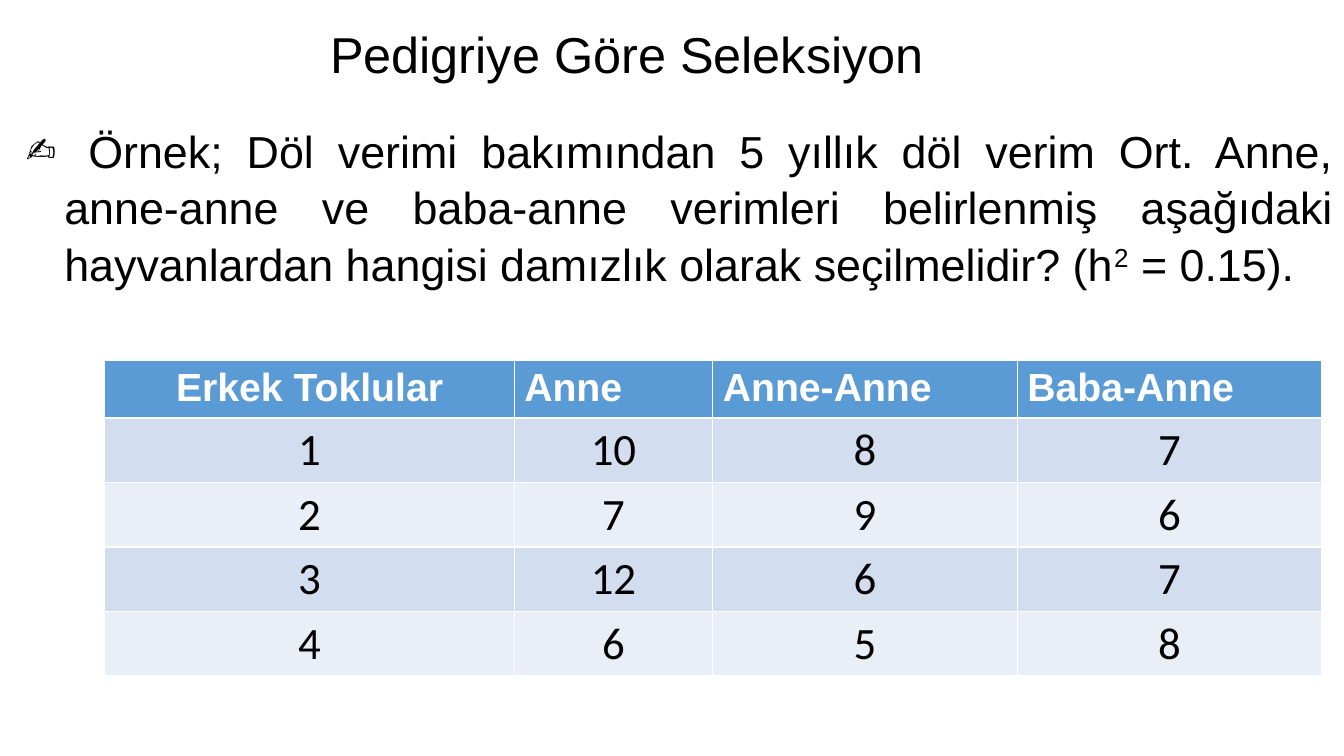
from lxml.etree import SubElement
from pptx import Presentation
from pptx.dml.color import RGBColor
from pptx.enum.text import MSO_ANCHOR, PP_ALIGN
from pptx.oxml.ns import qn
from pptx.util import Inches, Pt

COLORS = {
    "text": "000000",
    "header_text": "FFFFFF",
    "header": "5B9BD5",
    "odd_row": "D2DEEF",
    "even_row": "EAEFF7",
}
TITLE = "Pedigriye Göre Seleksiyon"
QUESTION = (
    " Örnek; Döl verimi bakımından 5 yıllık döl verim Ort. Anne, anne-anne ve "
    "baba-anne verimleri belirlenmiş aşağıdaki hayvanlardan hangisi damızlık "
    "olarak seçilmelidir? (h"
)
HEADERS = ["Erkek Toklular", "Anne", "Anne-Anne", "Baba-Anne"]
YIELDS = [(1, 10, 8, 7), (2, 7, 9, 6), (3, 12, 6, 7), (4, 6, 5, 8)]
COLUMN_WIDTHS = [4.06, 1.97, 3.02, 3.02]
HEADER_HEIGHT, ROW_HEIGHT = 0.54, 0.64


def add_text(paragraph, text, size=32, font="Arial", color="text", bold=False, baseline=0):
    run = paragraph.add_run()
    run.text = text
    run.font.size = Pt(size)
    run.font.name = font
    run.font.bold = bold
    run.font.color.rgb = RGBColor.from_string(COLORS[color])
    if baseline:
        run.font._element.set("baseline", str(baseline * 1000))


class SelectionSlide:
    """Draws the text and table of one slide in a shared style."""

    def __init__(self, presentation):
        self.slide = presentation.slides.add_slide(presentation.slide_layouts[6])

    def text_box(self, left, top, width, height, align, line_spacing, anchor=MSO_ANCHOR.TOP):
        shape = self.slide.shapes.add_textbox(
            Inches(left), Inches(top), Inches(width), Inches(height)
        )
        shape.text_frame.word_wrap = True
        shape.text_frame.vertical_anchor = anchor
        paragraph = shape.text_frame.paragraphs[0]
        paragraph.alignment = align
        paragraph.line_spacing = line_spacing
        return paragraph

    def title(self, text):
        paragraph = self.text_box(
            0.87, 0.16, 10.7, 0.73, PP_ALIGN.CENTER, 0.9, MSO_ANCHOR.BOTTOM
        )
        add_text(paragraph, text, size=36)

    def question(self):
        paragraph = self.text_box(0.16, 1.15, 13.17, 1.75, PP_ALIGN.JUSTIFY, 1.05)
        paragraph.space_before = Pt(10)
        properties = paragraph._p.get_or_add_pPr()
        properties.set("marL", str(Inches(0.38)))
        properties.set("indent", str(Inches(-0.38)))
        SubElement(properties, qn("a:buChar")).set("char", "✍")
        add_text(paragraph, QUESTION)
        add_text(paragraph, "2", baseline=30)
        add_text(paragraph, " = 0.15).")

    def cell(self, cell, text, fill, align, **text_format):
        cell.fill.solid()
        cell.fill.fore_color.rgb = RGBColor.from_string(COLORS[fill])
        paragraph = cell.text_frame.paragraphs[0]
        paragraph.alignment = align
        add_text(paragraph, str(text), **text_format)

    def table(self, left, top):
        height = HEADER_HEIGHT + ROW_HEIGHT * len(YIELDS)
        table = self.slide.shapes.add_table(
            len(YIELDS) + 1, len(HEADERS),
            Inches(left), Inches(top), Inches(sum(COLUMN_WIDTHS)), Inches(height),
        ).table
        for column, width in zip(table.columns, COLUMN_WIDTHS):
            column.width = Inches(width)
        for index, row in enumerate(table.rows):
            row.height = Inches(ROW_HEIGHT if index else HEADER_HEIGHT)
        for column, text in enumerate(HEADERS):
            align = PP_ALIGN.LEFT if column else PP_ALIGN.CENTER
            self.cell(table.cell(0, column), text, "header", align,
                      size=28, color="header_text", bold=True)
        for row, values in enumerate(YIELDS, start=1):
            fill = "odd_row" if row % 2 else "even_row"
            for column, value in enumerate(values):
                self.cell(table.cell(row, column), value, fill, PP_ALIGN.CENTER, font="Calibri")


def main():
    presentation = Presentation()
    presentation.slide_width = Inches(13.33)
    presentation.slide_height = Inches(7.5)
    slide = SelectionSlide(presentation)
    slide.title(TITLE)
    slide.question()
    slide.table(1.04, 3.58)
    presentation.save("out.pptx")


if __name__ == "__main__":
    main()
